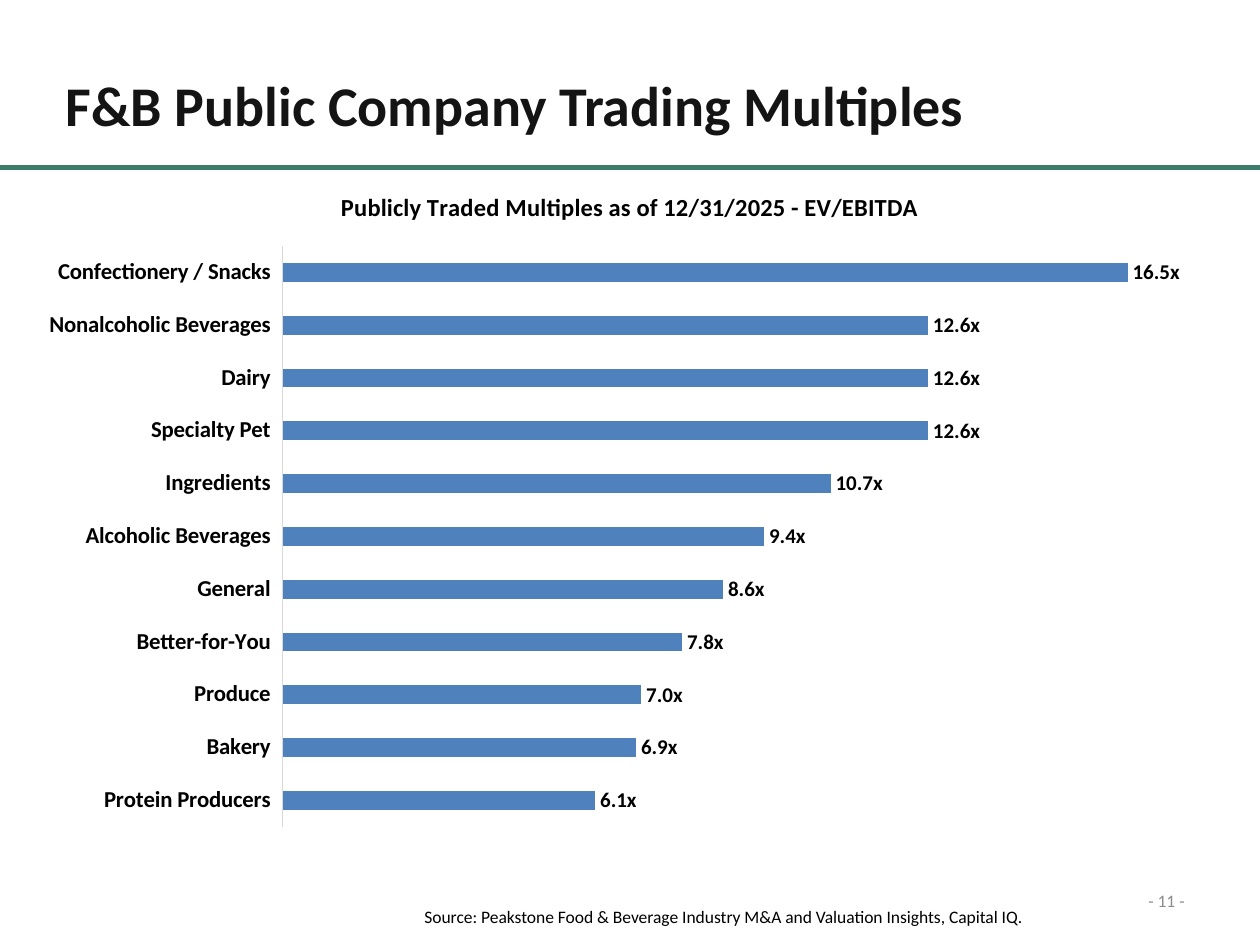
"""Build the slide of public company trading multiples by food and beverage segment."""
from dataclasses import dataclass
from typing import NamedTuple

from lxml import etree
from pptx import Presentation
from pptx.chart.data import CategoryChartData
from pptx.dml.color import RGBColor
from pptx.enum.chart import XL_CHART_TYPE, XL_LABEL_POSITION, XL_TICK_LABEL_POSITION, XL_TICK_MARK
from pptx.enum.shapes import MSO_CONNECTOR
from pptx.enum.text import MSO_ANCHOR, PP_ALIGN
from pptx.oxml import parse_xml
from pptx.oxml.ns import nsdecls, qn
from pptx.util import Inches, Pt

BAR = XL_CHART_TYPE.BAR_CLUSTERED
OUTSIDE_END = XL_LABEL_POSITION.OUTSIDE_END
LABELS_LOW = XL_TICK_LABEL_POSITION.LOW
NO_TICK = XL_TICK_MARK.NONE
STRAIGHT = MSO_CONNECTOR.STRAIGHT
TOP, MIDDLE = MSO_ANCHOR.TOP, MSO_ANCHOR.MIDDLE
LEFT, RIGHT = PP_ALIGN.LEFT, PP_ALIGN.RIGHT

COLUMNS, ROWS = 100, 75
CELL = Inches(0.1)


@dataclass(frozen=True)
class Theme:
    font: str = "Calibri"
    title: str = "141414"
    text: str = "000000"
    muted: str = "8C8C8C"
    rule: str = "3C7D69"
    bar: str = "4F81BD"
    axis: str = "D9D9D9"
    title_size: int = 32
    chart_title_size: int = 14
    category_size: int = 13
    label_size: int = 12
    small_size: int = 10


class Area(NamedTuple):
    column: float
    row: float
    columns: float
    rows: float


class Multiple(NamedTuple):
    segment: str
    value: float


THEME = Theme()
TITLE_AREA = Area(4.2, 5.1, 75.4, 6.4)
CHART_AREA = Area(2.5, 13.1, 95, 53.6)
PAGE_AREA = Area(86.7, 69.5, 8.3, 4)
SOURCE_AREA = Area(32.7, 71.4, 50.7, 2.7)
RULE_ROW = 13.3
PLOT_SHARES = {"x": 0.21, "y": 0.12, "w": 0.77, "h": 0.86}
MULTIPLE_FORMAT = r"0.0\x"
MULTIPLES = [
    Multiple("Confectionery / Snacks", 16.5),
    Multiple("Nonalcoholic Beverages", 12.6),
    Multiple("Dairy", 12.6),
    Multiple("Specialty Pet", 12.6),
    Multiple("Ingredients", 10.7),
    Multiple("Alcoholic Beverages", 9.4),
    Multiple("General", 8.6),
    Multiple("Better-for-You", 7.8),
    Multiple("Produce", 7.0),
    Multiple("Bakery", 6.9),
    Multiple("Protein Producers", 6.1),
]


def cells(count: float) -> int:
    return round(count * CELL)


def place(shape, area: Area) -> None:
    shape.left, shape.top, shape.width, shape.height = map(cells, area)


def style_font(font, size: float, color: str, bold: bool = False) -> None:
    font.name, font.size, font.bold = THEME.font, Pt(size), bold
    font.color.rgb = RGBColor.from_string(color)


def write(shape, text: str, *, size: float, color: str, bold: bool = False,
          align=LEFT, anchor=TOP, wrap: bool = False) -> None:
    frame = shape.text_frame
    frame.word_wrap, frame.vertical_anchor = wrap, anchor
    paragraph = frame.paragraphs[0]
    paragraph.alignment = align
    run = paragraph.add_run()
    run.text = text
    style_font(run.font, size, color, bold)


def add_text(slide, area: Area, text: str, **text_format) -> None:
    shape = slide.shapes.add_textbox(*map(cells, area))
    write(shape, text, **text_format)


def add_rule(slide) -> None:
    height = cells(RULE_ROW)
    rule = slide.shapes.add_connector(STRAIGHT, 0, height, cells(COLUMNS), height)
    rule.line.color.rgb = RGBColor.from_string(THEME.rule)
    rule.line.width = Pt(3)
    etree.SubElement(rule.element.spPr, qn("a:effectLst"))


def set_plot_area(chart) -> None:
    plot_area = chart.plots[0]._element.getparent()
    for layout in plot_area.findall(qn("c:layout")):
        plot_area.remove(layout)
    shares = "".join(f'<c:{name} val="{share}"/>' for name, share in PLOT_SHARES.items())
    plot_area.insert(0, parse_xml(
        f'<c:layout {nsdecls("c")}><c:manualLayout><c:layoutTarget val="inner"/>'
        f'<c:xMode val="edge"/><c:yMode val="edge"/>{shares}</c:manualLayout></c:layout>'))


def add_multiples_chart(slide, area: Area, multiples: list[Multiple]) -> None:
    data = CategoryChartData(number_format=MULTIPLE_FORMAT)
    data.categories = [multiple.segment for multiple in multiples]
    data.add_series("Series 1", [multiple.value for multiple in multiples])
    chart = slide.shapes.add_chart(BAR, *map(cells, area), data).chart
    style_font(chart.font, THEME.label_size, THEME.text, True)
    chart.has_legend = False
    chart.has_title = True
    write(chart.chart_title, "Publicly Traded Multiples as of 12/31/2025 - EV/EBITDA",
          size=THEME.chart_title_size, color=THEME.text, bold=True, align=PP_ALIGN.CENTER, wrap=True)
    chart.chart_title.include_in_layout = False

    categories = chart.category_axis
    categories.reverse_order = True
    categories.major_tick_mark = categories.minor_tick_mark = NO_TICK
    categories.tick_label_position = LABELS_LOW
    categories.format.line.color.rgb = RGBColor.from_string(THEME.axis)
    categories.format.line.width = Pt(0.75)
    style_font(categories.tick_labels.font, THEME.category_size, THEME.text, True)

    values = chart.value_axis
    values.minimum_scale, values.maximum_scale = 0, 18
    values.has_major_gridlines = False
    values.tick_labels.number_format = MULTIPLE_FORMAT
    values.tick_labels.number_format_is_linked = False
    values.visible = False

    plot = chart.plots[0]
    plot.gap_width = 182
    plot.vary_by_categories = False
    fill = plot.series[0].format.fill
    fill.solid()
    fill.fore_color.rgb = RGBColor.from_string(THEME.bar)
    labels = plot.series[0].data_labels
    labels.show_value = True
    labels.position = OUTSIDE_END
    labels.number_format = MULTIPLE_FORMAT
    labels.number_format_is_linked = False
    style_font(labels.font, THEME.label_size, THEME.text, True)
    set_plot_area(chart)


def main() -> None:
    presentation = Presentation()
    presentation.slide_width, presentation.slide_height = cells(COLUMNS), cells(ROWS)
    slide = presentation.slides.add_slide(presentation.slide_layouts[5])
    add_rule(slide)
    title = slide.shapes.title
    place(title, TITLE_AREA)
    write(title, "F&B Public Company Trading Multiples",
          size=THEME.title_size, color=THEME.title, bold=True)
    add_text(slide, PAGE_AREA, "- 11 -", size=THEME.small_size, color=THEME.muted,
             align=RIGHT, anchor=MIDDLE, wrap=True)
    add_text(slide, SOURCE_AREA,
             "Source: Peakstone Food & Beverage Industry M&A and Valuation Insights, Capital IQ.",
             size=THEME.small_size, color=THEME.text)
    add_multiples_chart(slide, CHART_AREA, MULTIPLES)
    presentation.save("out.pptx")


if __name__ == "__main__":
    main()
